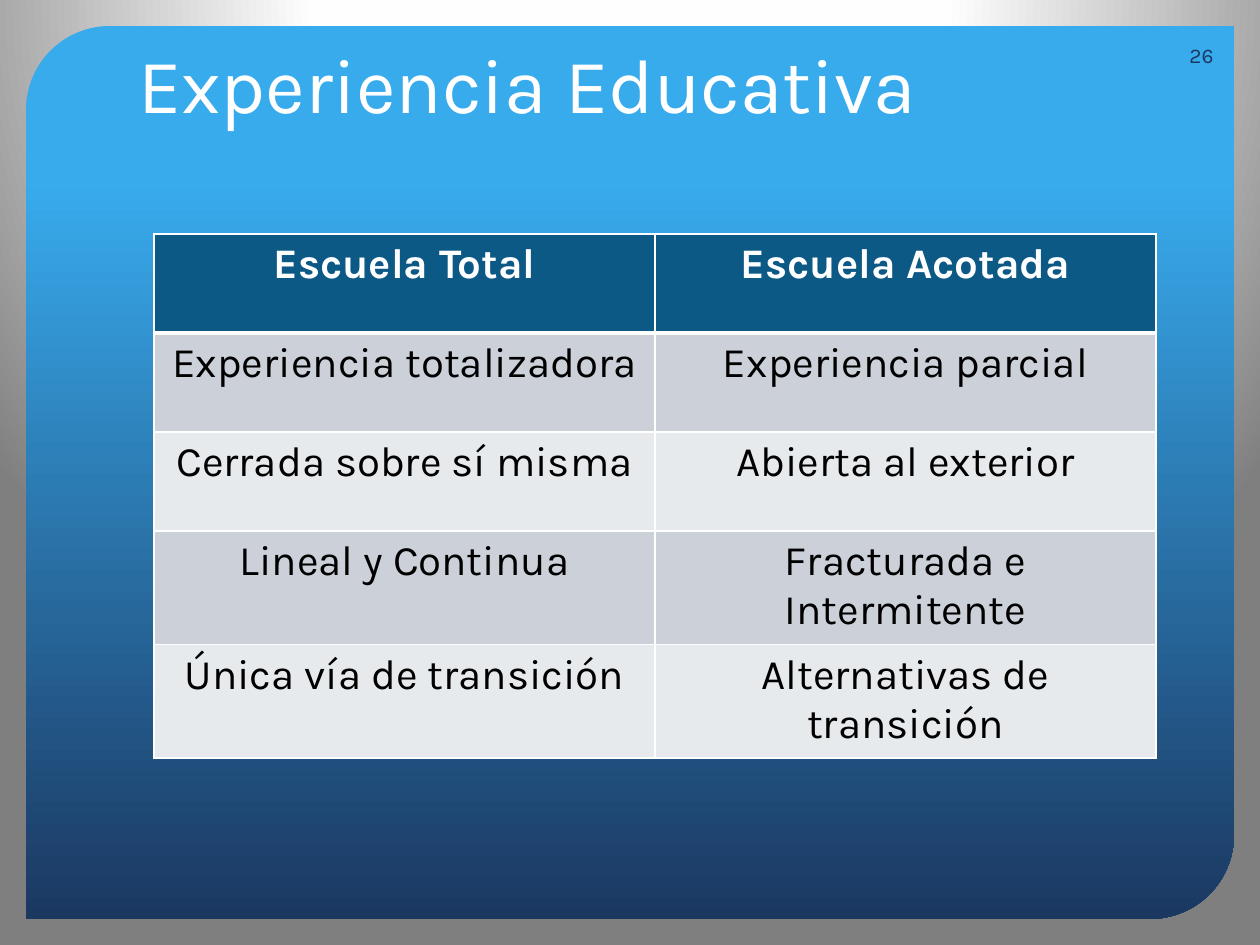
from pptx import Presentation
from pptx.dml.color import RGBColor
from pptx.enum.shapes import MSO_SHAPE
from pptx.enum.text import MSO_ANCHOR, PP_ALIGN
from pptx.oxml import parse_xml
from pptx.oxml.ns import nsdecls, qn
from pptx.util import Pt

PX = 914400 / 126
FONT = "Karla"
WHITE, NAVY, HEADER = "FFFFFF", "1B3861", "0C5986"
BANDS = ("CCD1D9", "E7EAED")
RADIAL = ('<a:path path="circle"><a:fillToRect l="50000" t="-80000" '
          'r="50000" b="180000"/></a:path>')
DOWNWARD = '<a:lin ang="5400000" scaled="0"/>'
ROWS = (
    ("Escuela Total", "Escuela Acotada"),
    ("Experiencia totalizadora", "Experiencia parcial"),
    ("Cerrada sobre sí misma", "Abierta al exterior"),
    ("Lineal y Continua", "Fracturada e Intermitente"),
    ("Única vía de transición", "Alternativas de transición"),
)
ROW_HEIGHTS = (99, 99, 99, 105, 105)


def px(*values):
    """Turn pixels into a list of EMU lengths."""
    return [round(v * PX) for v in values]


def rgb(color):
    """Turn a hex string into a colour."""
    return RGBColor.from_string(color)


def set_gradient(fill, parent, stops, direction):
    """Give the owner of a fill a gradient in the given direction."""
    fill.solid()
    marks = "".join(f'<a:gs pos="{pos * 1000}"><a:srgbClr val="{color}"/></a:gs>'
                    for pos, color in stops)
    gradient = parse_xml(f'<a:gradFill {nsdecls("a")} rotWithShape="1">'
                         f'<a:gsLst>{marks}</a:gsLst>{direction}</a:gradFill>')
    parent.replace(parent.find(qn("a:solidFill")), gradient)


def write(tf, text, size, color, align, bold=False):
    """Write one formatted paragraph."""
    tf.text = text
    p = tf.paragraphs[0]
    p.alignment = align
    font = p.runs[0].font
    font.name, font.size, font.bold = FONT, Pt(size), bold
    font.color.rgb = rgb(color)


def add_background(s):
    """Paint the background and the rounded panel."""
    fill = s.background.fill
    fill.solid()
    set_gradient(fill, s.element.find(f'.//{qn("p:bgPr")}'),
                 ((0, WHITE), (40, "FEFEFE"), (100, "7F7F7F")), RADIAL)
    panel = s.shapes.add_shape(MSO_SHAPE.ROUND_2_DIAG_RECTANGLE, *px(26, 26, 1208, 893))
    panel.adjustments[0], panel.adjustments[1] = 0.094, 0
    panel.shadow.inherit = False
    panel.line.fill.background()
    set_gradient(panel.fill, panel.element.spPr, ((17, "38ABED"), (100, NAVY)), DOWNWARD)


def add_text(s, box, text, size, color, align, anchor):
    """Add a wrapped text box."""
    tf = s.shapes.add_textbox(*px(*box)).text_frame
    tf.word_wrap = True
    tf.vertical_anchor = anchor
    write(tf, text, size, color, align)


def set_borders(cell, bottom):
    """Draw white cell borders with a given bottom width."""
    tc_pr = cell._tc.get_or_add_tcPr()
    widths = (("L", 1), ("R", 1), ("T", 1), ("B", bottom))
    for i, (side, width) in enumerate(widths):
        tc_pr.insert(i, parse_xml(
            f'<a:ln{side} {nsdecls("a")} w="{Pt(width)}"><a:solidFill>'
            f'<a:srgbClr val="{WHITE}"/></a:solidFill></a:ln{side}>'))


def add_comparison(s):
    """Add the table that compares both schools."""
    table = s.shapes.add_table(len(ROWS), 2, *px(154, 234, 1002, sum(ROW_HEIGHTS))).table
    for i, (texts, height) in enumerate(zip(ROWS, ROW_HEIGHTS)):
        table.rows[i].height = px(height)[0]
        header = i == 0
        for j, text in enumerate(texts):
            cell = table.cell(i, j)
            cell.fill.solid()
            cell.fill.fore_color.rgb = rgb(HEADER if header else BANDS[(i - 1) % 2])
            set_borders(cell, 3 if header else 1)
            if i == 1:
                cell._tc.tcPr.find(qn("a:lnT")).set("w", str(Pt(3)))
            write(cell.text_frame, text, 24, WHITE if header else "000000",
                  PP_ALIGN.CENTER, header)


def main():
    """Build and save the slide."""
    prs = Presentation()
    prs.slide_width, prs.slide_height = px(1260, 945)
    s = prs.slides.add_slide(prs.slide_layouts[6])
    add_background(s)
    add_text(s, (126, 38, 1071, 97), "Experiencia Educativa", 44, WHITE,
             PP_ALIGN.LEFT, MSO_ANCHOR.BOTTOM)
    add_text(s, (1158, 30, 68, 50), "26", 12, NAVY, PP_ALIGN.RIGHT, MSO_ANCHOR.MIDDLE)
    add_comparison(s)
    prs.save("out.pptx")


if __name__ == "__main__":
    main()
